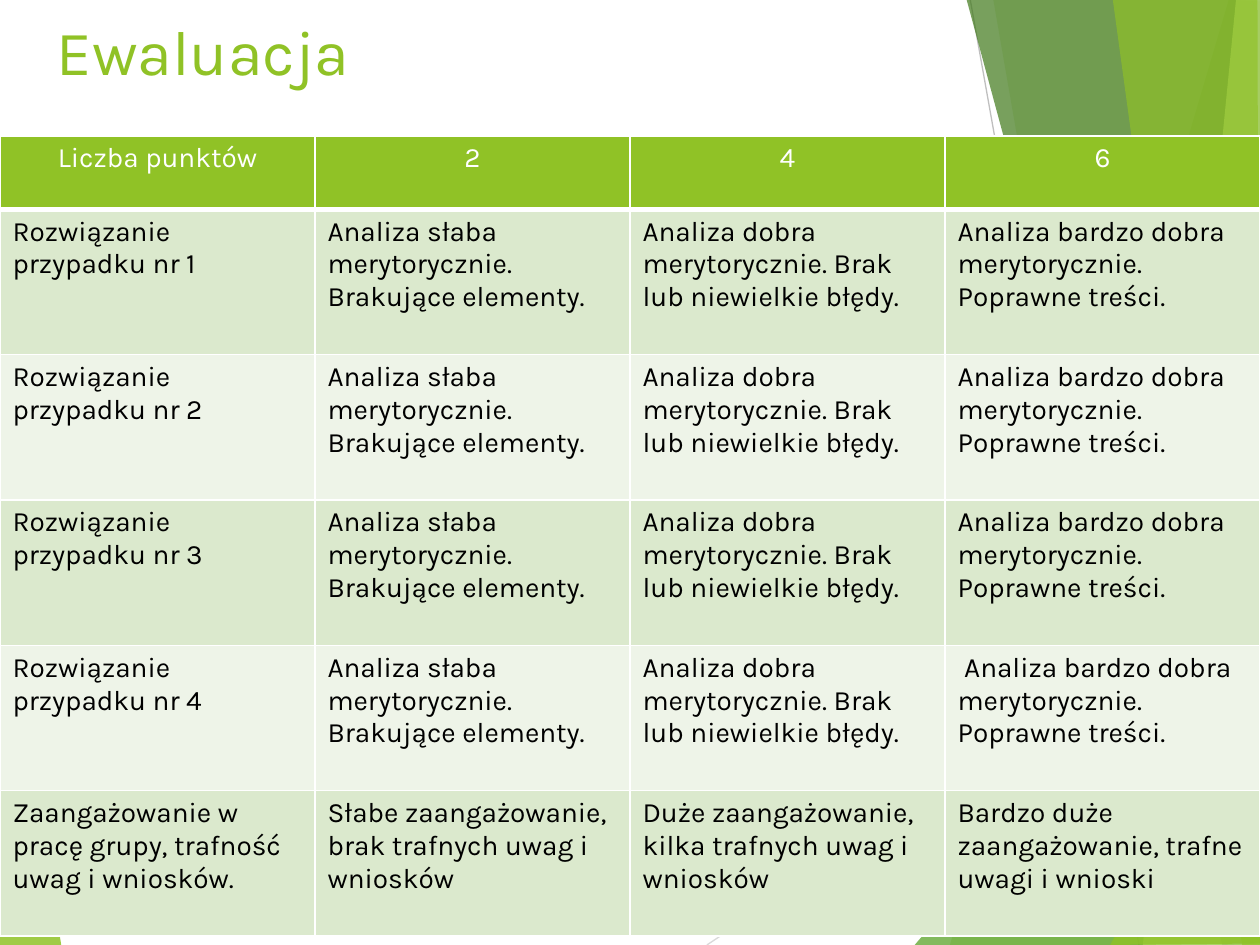
from dataclasses import dataclass

import lxml.etree
import pptx
import pptx.dml.color
import pptx.enum.shapes
import pptx.enum.text
import pptx.oxml.ns
import pptx.util

Cm = pptx.util.Cm
Pt = pptx.util.Pt
qn = pptx.oxml.ns.qn


@dataclass(frozen=True)
class Theme:
    font: str = "Karla"
    title_size: int = 36
    table_size: int = 16
    accent: str = "90C226"
    leaf: str = "54A021"
    forest: str = "3F7819"
    lime: str = "C0E474"
    light_line: str = "D9D9D9"
    dark_line: str = "BFBFBF"
    white: str = "FFFFFF"
    black: str = "000000"
    bands: tuple = ("DBE9CD", "EEF4E8")


THEME = Theme()

CORNER = ([(-0.03, 11.15), (1.24, 19.08), (-0.03, 19.05)], THEME.accent, 85)

RAYS = [
    ((14.25, 19.05), (25.43, 11.61), THEME.light_line),
    ((19.56, 0), (22.96, 19.05), THEME.dark_line),
]

FACETS = [
    ([(24.77, 0), (19.15, 19.05), (25.45, 19.08), (25.43, 0.03)], THEME.accent, 30),
    ([(20.02, -0.03), (23.34, 19.05), (25.43, 19.05), (25.43, -0.03)], THEME.accent, 20),
    ([(18.44, 19.05), (25.4, 10.9), (25.43, 19.05)], THEME.leaf, 72),
    ([(19.48, -0.03), (24.64, 19.05), (25.43, 19.02), (25.43, -0.03)], THEME.forest, 70),
    ([(24.92, -0.03), (23.04, 19.05), (25.43, 19.05), (25.4, -0.03)], THEME.lime, 70),
    ([(22.43, -0.03), (25.04, 19.05), (25.4, 19.05), (25.35, -0.03)], THEME.accent, 65),
    ([(22.38, 19.05), (25.43, 13.59), (25.43, 19.02)], THEME.accent, 80),
]

HEADER = ["Liczba punktów", "2", "4", "6"]
ANALYSIS = [
    "Analiza słaba merytorycznie. Brakujące elementy.",
    "Analiza dobra merytorycznie. Brak lub niewielkie błędy.",
    "Analiza bardzo dobra merytorycznie. Poprawne treści.",
]
ENGAGEMENT = [
    "Zaangażowanie w pracę grupy, trafność uwag i wniosków.",
    "Słabe zaangażowanie, brak trafnych uwag i wniosków",
    "Duże zaangażowanie, kilka trafnych uwag i wniosków",
    "Bardzo duże zaangażowanie, trafne uwagi i wnioski",
]


def rgb(color):
    return pptx.dml.color.RGBColor.from_string(color)


def style_paragraph(paragraph, size, color):
    paragraph.font.name = THEME.font
    paragraph.font.size = Pt(size)
    paragraph.font.color.rgb = rgb(color)


def add_facet(page, points, color, opacity):
    corners = [(Cm(x), Cm(y)) for x, y in points]
    builder = page.shapes.build_freeform(*corners[0])
    builder.add_line_segments(corners[1:], close=True)
    shape = builder.convert_to_shape()
    shape.shadow.inherit = False
    shape.line.fill.background()
    shape.fill.solid()
    shape.fill.fore_color.rgb = rgb(color)
    color_element = next(shape.element.spPr.iter(qn("a:srgbClr")))
    lxml.etree.SubElement(color_element, qn("a:alpha"), val=str(opacity * 1000))


def add_ray(page, start, end, color):
    ray = page.shapes.add_connector(
        pptx.enum.shapes.MSO_CONNECTOR.STRAIGHT, *map(Cm, start + end)
    )
    ray.line.color.rgb = rgb(color)
    ray.line.width = Pt(0.75)
    lxml.etree.SubElement(ray.element.spPr, qn("a:effectLst"))


def format_title(page, text):
    title = page.shapes.title
    title.left, title.top, title.width, title.height = map(Cm, (0.89, 0, 22.86, 2.59))
    frame = title.text_frame
    frame.text = text
    frame.margin_top = Cm(0.25)
    frame.vertical_anchor = pptx.enum.text.MSO_ANCHOR.TOP
    paragraph = frame.paragraphs[0]
    paragraph.alignment = pptx.enum.text.PP_ALIGN.LEFT
    style_paragraph(paragraph, THEME.title_size, THEME.accent)


def set_borders(cell, bottom_width):
    properties = cell._tc.get_or_add_tcPr()
    widths = {"lnL": 1, "lnR": 1, "lnT": 1, "lnB": bottom_width}
    for position, (side, width) in enumerate(widths.items()):
        line = lxml.etree.Element(qn(f"a:{side}"), w=str(Pt(width)))
        fill = lxml.etree.SubElement(line, qn("a:solidFill"))
        lxml.etree.SubElement(fill, qn("a:srgbClr"), val=THEME.white)
        properties.insert(position, line)


def fill_cell(cell, text, fill, color, header):
    cell.text = text
    cell.fill.solid()
    cell.fill.fore_color.rgb = rgb(fill)
    paragraph = cell.text_frame.paragraphs[0]
    align = pptx.enum.text.PP_ALIGN
    paragraph.alignment = align.CENTER if header else align.LEFT
    style_paragraph(paragraph, THEME.table_size, color)
    set_borders(cell, 3 if header else 1)


def add_score_table(page, rows):
    frame = page.shapes.add_table(
        len(rows), len(rows[0]), Cm(0), Cm(2.74), Cm(25.4), Cm(16.1)
    )
    table = frame.table
    table.horz_banding = False
    for row_index, texts in enumerate(rows):
        header = row_index == 0
        table.rows[row_index].height = Cm(1.48 if header else 2.93)
        fill = THEME.accent if header else THEME.bands[(row_index - 1) % 2]
        color = THEME.white if header else THEME.black
        for column_index, text in enumerate(texts):
            fill_cell(table.cell(row_index, column_index), text, fill, color, header)


def score_rows():
    cases = [[f"Rozwiązanie przypadku nr {n}", *ANALYSIS] for n in range(1, 5)]
    cases[-1][-1] = " " + cases[-1][-1]
    return [HEADER, *cases, ENGAGEMENT]


def main():
    deck = pptx.Presentation()
    deck.slide_width, deck.slide_height = Cm(25.4), Cm(19.05)
    page = deck.slides.add_slide(deck.slide_layouts.get_by_name("Title Only"))
    add_facet(page, *CORNER)
    for ray in RAYS:
        add_ray(page, *ray)
    for facet in FACETS:
        add_facet(page, *facet)
    format_title(page, "Ewaluacja")
    add_score_table(page, score_rows())
    deck.save("out.pptx")


if __name__ == "__main__":
    main()
